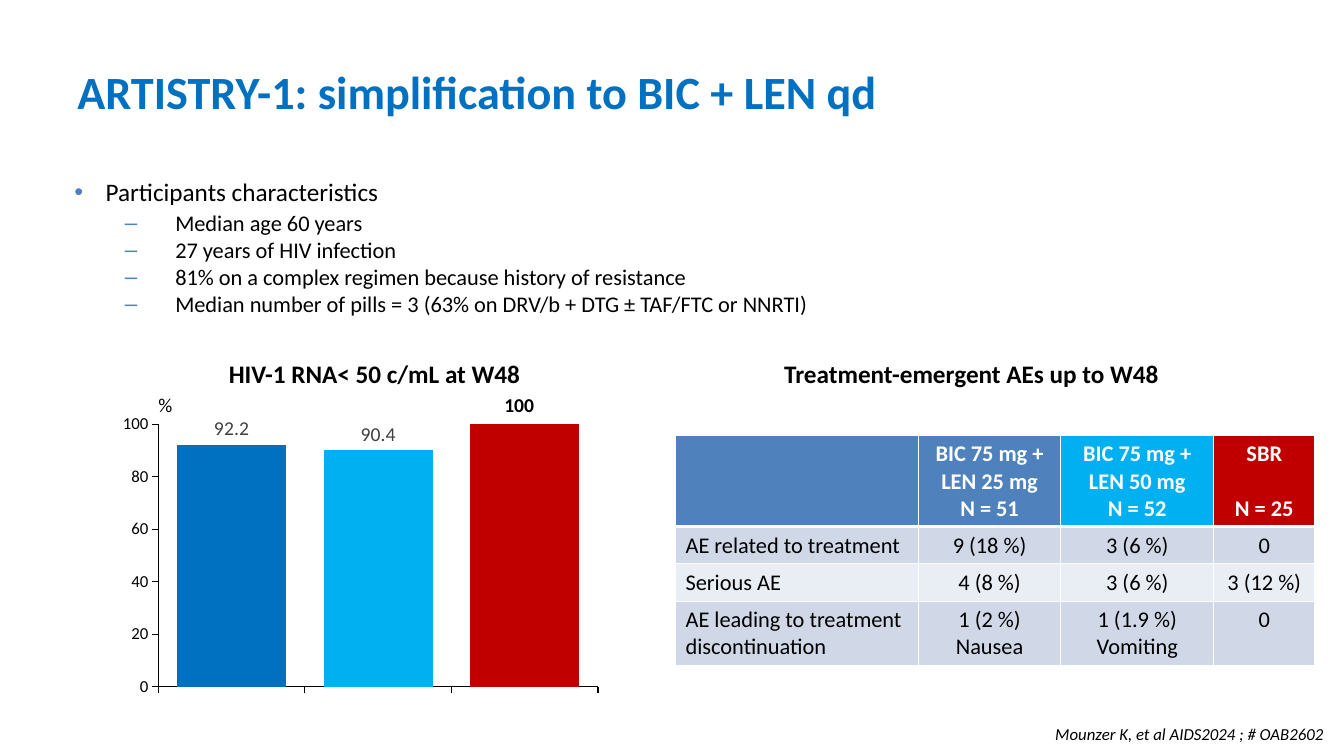
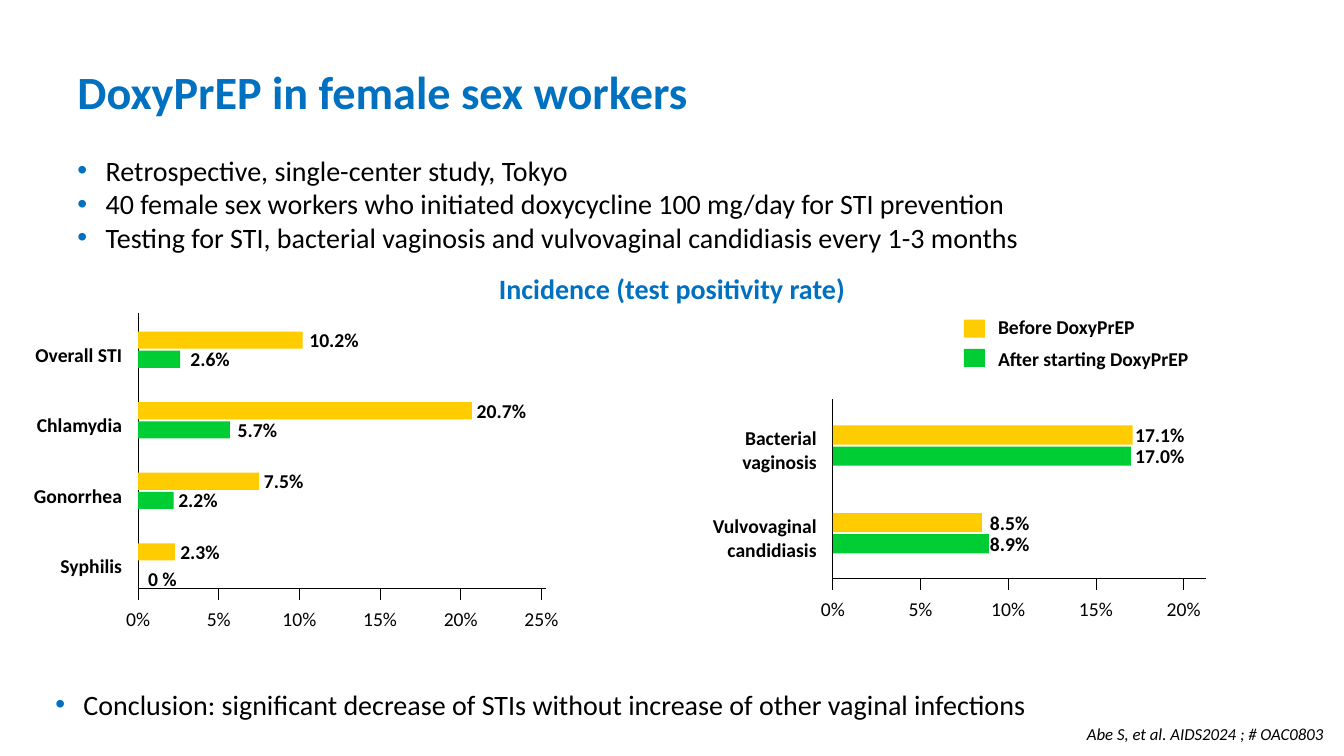
"""Build two HIV and STI study slides: ARTISTRY-1 results and DoxyPrEP incidence."""
from lxml.etree import SubElement
from pptx import Presentation
from pptx.chart.data import CategoryChartData
from pptx.dml.color import RGBColor
from pptx.enum.chart import XL_CHART_TYPE as CT, XL_LABEL_POSITION as LP, XL_TICK_MARK as TM
from pptx.enum.shapes import MSO_CONNECTOR as MC, MSO_SHAPE as SH
from pptx.enum.text import MSO_ANCHOR as MA, MSO_AUTO_SIZE as AS, PP_ALIGN as AL
from pptx.oxml.ns import qn
from pptx.util import Inches, Pt

HEX = {
    "black": "000000", "white": "FFFFFF", "grey": "404040",
    "blue": "0070C0", "sky": "00B0F0", "red": "C00000", "steel": "4F81BD",
    "band": "D0D8E8", "pale": "E9EDF4",
    "before": "FFCC00", "after": "00CC33",
}
RGB = {name: RGBColor.from_string(value) for name, value in HEX.items()}
TITLE = {"size": Pt(33), "bold": True, "color": "blue"}
HEADING = {"size": Pt(18), "bold": True}
LABEL = {"size": Pt(14), "bold": True}
TICK = {"size": Pt(14)}
CITATION = {"size": Pt(12), "italic": True}
CELL = {"size": Pt(16)}
BODY = {"size": Pt(20)}


def write(tf, lines, fmt, align=None, bullet=None):
    for line in lines:
        p = tf.add_paragraph() if tf.text else tf.paragraphs[0]
        if bullet:
            char, color, margin, hang = bullet
            pPr = p._p.get_or_add_pPr()
            pPr.set("marL", str(Inches(margin)))
            pPr.set("indent", str(-Inches(hang)))
            SubElement(SubElement(pPr, qn("a:buClr")), qn("a:srgbClr"), val=HEX[color])
            SubElement(pPr, qn("a:buFont"), typeface="Arial")
            SubElement(pPr, qn("a:buChar"), char=char)
        p.alignment = align
        r = p.add_run()
        r.text = line
        r.font.name = "Calibri"
        r.font.color.rgb = RGB[fmt.get("color", "black")]
        for key, value in fmt.items():
            if key != "color":
                setattr(r.font, key, value)


def add_text(shapes, at, lines, fmt, align=None, bullet=None, wrap=False):
    tf = shapes.add_textbox(*map(Inches, at)).text_frame
    tf.word_wrap = wrap
    tf.auto_size = AS.NONE if wrap else AS.SHAPE_TO_FIT_TEXT
    write(tf, lines, fmt, align, bullet)
    return tf


prs = Presentation()
prs.slide_width, prs.slide_height = Inches(13.33), Inches(7.5)

slides = []
for title, citation, width in [
    ("ARTISTRY-1: simplification to BIC + LEN qd", "Mounzer K, et al AIDS2024 ; # OAB2602", 2.85),
    ("DoxyPrEP in female sex workers", "Abe S, et al. AIDS2024 ; # OAC0803", 2.63),
]:
    s = prs.slides.add_slide(prs.slide_layouts[6])
    tf = add_text(s.shapes, (0.67, 0.28, 9.28, 1.25), [title], TITLE, wrap=True)
    tf.vertical_anchor = MA.MIDDLE
    tf = add_text(s.shapes, (13.21 - width, 7.18, width, 0.2), [citation], CITATION, AL.RIGHT)
    tf.margin_top = tf.margin_bottom = 0
    tf.margin_left = tf.margin_right = Inches(0.08)
    slides.append(s)
artistry, doxy = slides

tf = add_text(artistry.shapes, (0.64, 1.7, 8.36, 1.51), ["Participants characteristics"],
              {"size": Pt(18)}, bullet=("•", "steel", 0.31, 0.31), wrap=True)
write(tf, [
    "Median age 60 years",
    "27 years of HIV infection",
    "81% on a complex regimen because history of resistance",
    "Median number of pills = 3 (63% on DRV/b + DTG ± TAF/FTC or NNRTI)",
], CELL, bullet=("–", "steel", 1, 0.5))
tf.paragraphs[1].space_before = Pt(2)

data = CategoryChartData()
data.categories = [" ", " ", " "]
data.add_series("Series 1", (92, 90, 100))
chart = artistry.shapes.add_chart(
    CT.COLUMN_CLUSTERED, *map(Inches, (1.13, 4.05, 4.9, 3.14)), data).chart
chart.has_legend = chart.has_title = False
chart.font.name, chart.font.size = "Calibri", Pt(12)
chart.font.color.rgb = RGB["black"]
layout = SubElement(chart.plots[0]._element.getparent(), qn("c:layout"))
chart.plots[0]._element.getparent().insert(0, layout)
manual = SubElement(layout, qn("c:manualLayout"))
for tag, val in [("layoutTarget", "inner"), ("xMode", "edge"), ("yMode", "edge"),
                 ("x", "0.09"), ("y", "0.05"), ("w", "0.89"), ("h", "0.83")]:
    SubElement(manual, qn(f"c:{tag}"), val=val)
for old in chart.plots[0]._element.getparent().findall(qn("c:layout"))[1:]:
    old.getparent().remove(old)

for axis in (chart.category_axis, chart.value_axis):
    axis.has_major_gridlines = False
    axis.major_tick_mark, axis.minor_tick_mark = TM.OUTSIDE, TM.NONE
    axis.format.line.color.rgb = RGB["black"]
    axis.format.line.width = Pt(0.75)
for key, value in {"minimum_scale": 0, "maximum_scale": 100, "major_unit": 20}.items():
    setattr(chart.value_axis, key, value)

plot = chart.plots[0]
plot.gap_width, plot.overlap, plot.vary_by_categories = 34, -51, False
for i, (color, label) in enumerate([("blue", "92.2"), ("sky", "90.4"), ("red", None)]):
    point = plot.series[0].points[i]
    point.format.fill.solid()
    point.format.fill.fore_color.rgb = RGB[color]
    if label:
        write(point.data_label.text_frame, [label], {"size": Pt(14), "color": "grey"})
        point.data_label.position = LP.OUTSIDE_END

for at, text, fmt in [
    ((4.9, 3.85, 0.5, 0.34), "100", LABEL),
    ((1.47, 3.85, 0.34, 0.34), "%", TICK),
    ((2.15, 3.51, 3.13, 0.4), "HIV-1 RNA< 50 c/mL at W48", HEADING),
    ((7.66, 3.51, 3.95, 0.4), "Treatment-emergent AEs up to W48", HEADING),
]:
    add_text(artistry.shapes, at, [text], fmt, AL.CENTER)

rows = [
    [[], ["BIC 75 mg +", "LEN 25 mg", "N = 51"], ["BIC 75 mg +", "LEN 50 mg", "N = 52"], ["SBR", "N = 25"]],
    [["AE related to treatment"], ["9 (18 %)"], ["3 (6 %)"], ["0"]],
    [["Serious AE"], ["4 (8 %)"], ["3 (6 %)"], ["3 (12 %)"]],
    [["AE leading to treatment discontinuation"], ["1 (2 %)", "Nausea"], ["1 (1.9 %)", "Vomiting"], ["0"]],
]
head_fills = ["steel", "steel", "sky", "red"]
table = artistry.shapes.add_table(4, 4, *map(Inches, (6.7, 4.32, 6.34, 2.27))).table
table.horz_banding = False
for col, width in zip(table.columns, (2.41, 1.41, 1.52, 1)):
    col.width = Inches(width)
for row, height in zip(table.rows, (0.89, 0.37, 0.37, 0.64)):
    row.height = Inches(height)
for i, row in enumerate(rows):
    for j, lines in enumerate(row):
        cell = table.cell(i, j)
        fmt = CELL if i else {**CELL, "bold": True, "color": "white"}
        write(cell.text_frame, lines, fmt, AL.CENTER if j else AL.LEFT)
        cell.vertical_anchor = MA.TOP if i else MA.MIDDLE
        tcPr = cell._tc.get_or_add_tcPr()
        for side in "LRTB":
            thick = (i, side) in [(0, "B"), (1, "T")]
            ln = SubElement(tcPr, qn(f"a:ln{side}"), w=str(Pt(3 if thick else 1)))
            SubElement(SubElement(ln, qn("a:solidFill")), qn("a:srgbClr"), val=HEX["white"])
        cell.fill.solid()
        cell.fill.fore_color.rgb = RGB[("band" if i % 2 else "pale") if i else head_fills[j]]
table.cell(0, 3).text_frame.paragraphs[1].space_before = Pt(19.5)

dot = ("•", "blue", 0.28, 0.28)
add_text(doxy.shapes, (0.67, 1.47, 12, 1.14), [
    "Retrospective, single-center study, Tokyo",
    "40 female sex workers who initiated doxycycline 100 mg/day for STI prevention",
    "Testing for STI, bacterial vaginosis and vulvovaginal candidiasis every 1-3 months",
], BODY, bullet=dot, wrap=True)
add_text(doxy.shapes, (4.85, 2.64, 3.66, 0.44), ["Incidence (test positivity rate)"],
         {**BODY, "bold": True, "color": "blue"})
add_text(doxy.shapes, (0.45, 6.77, 12, 0.45), [
    "Conclusion: significant decrease of STIs without increase of other vaginal infections",
], BODY, bullet=dot, wrap=True)

panels = [
    {"x": 1.37, "y": 5.84, "w": 4.05, "h": 2.73, "step": 0.8, "ticks": 6,
     "first": 3.29, "pitch": 0.7, "bar": 0.17,
     "groups": [(["Overall STI"], (10.2, 2.97), (2.6, 1.79)),
                (["Chlamydia"], (20.7, 4.63), (5.7, 2.26)),
                (["Gonorrhea"], (7.5, 2.52), (2.2, 1.67)),
                (["Syphilis"], (2.3, 1.69), (0, 1.37))]},
    {"x": 8.26, "y": 5.74, "w": 3.7, "h": 1.78, "step": 0.87, "ticks": 5,
     "first": 4.22, "pitch": 0.87, "bar": 0.19,
     "groups": [(["Bacterial", "vaginosis"], (17.1, 11.16), (17.0, 11.16)),
                (["Vulvovaginal", "candidiasis"], (8.5, 9.72), (8.9, 9.72))]},
]
bars = []
for panel in panels:
    x, y, bar = panel["x"], panel["y"], panel["bar"]
    shapes = doxy.shapes.add_group_shape().shapes
    outline = shapes.build_freeform(Inches(x + panel["w"]), Inches(y))
    outline.add_line_segments([(Inches(x), Inches(y)), (Inches(x), Inches(y - panel["h"]))], close=False)
    axis = outline.convert_to_shape()
    axis.fill.background()
    axis.shadow.inherit = False
    lines = [axis]
    for i in range(panel["ticks"]):
        tick_x = x + i * panel["step"]
        tick = shapes.add_connector(MC.STRAIGHT, *map(Inches, (tick_x, y + 0.11, tick_x, y)))
        SubElement(tick._element.spPr, qn("a:effectLst"))
        lines.append(tick)
        add_text(shapes, (tick_x - 0.27, y + 0.13, 0.54, 0.34), [f"{5 * i}%"], TICK, AL.CENTER)
    for sp in lines:
        sp.line.color.rgb = RGB["black"]
        sp.line.width = Pt(0.5)
    for i, (name, *pair) in enumerate(panel["groups"]):
        top = panel["first"] + i * panel["pitch"]
        height = 0.1 + 0.24 * len(name)
        add_text(shapes, (x - 1.3, top + bar + 0.06 - height / 2, 1.24, height), name, LABEL, AL.RIGHT)
        for j, (value, label_x) in enumerate(pair):
            bar_y = top + j * (bar + 0.02)
            if value:
                bars.append((shapes, (x, bar_y, value * panel["step"] / 5, bar), j))
            label_y = bar_y + bar / 2 - 0.17 if value else bar_y
            add_text(shapes, (label_x, label_y, 0.7, 0.34), [f"{value:.1f}%" if value else "0 %"], LABEL)

shapes = doxy.shapes.add_group_shape().shapes
for j, name in enumerate(["Before DoxyPrEP", "After starting DoxyPrEP"]):
    add_text(shapes, (9.8, 3.08 + 0.31 * j, 2.11, 0.34), [name], LABEL)
    bars.append((shapes, (9.56, 3.17 + 0.29 * j, 0.21, 0.18), j))
for shapes, at, j in bars:
    sp = shapes.add_shape(SH.RECTANGLE, *map(Inches, at))
    sp.shadow.inherit = False
    sp.line.fill.background()
    sp.fill.solid()
    sp.fill.fore_color.rgb = RGB[("before", "after")[j]]

prs.save("out.pptx")
